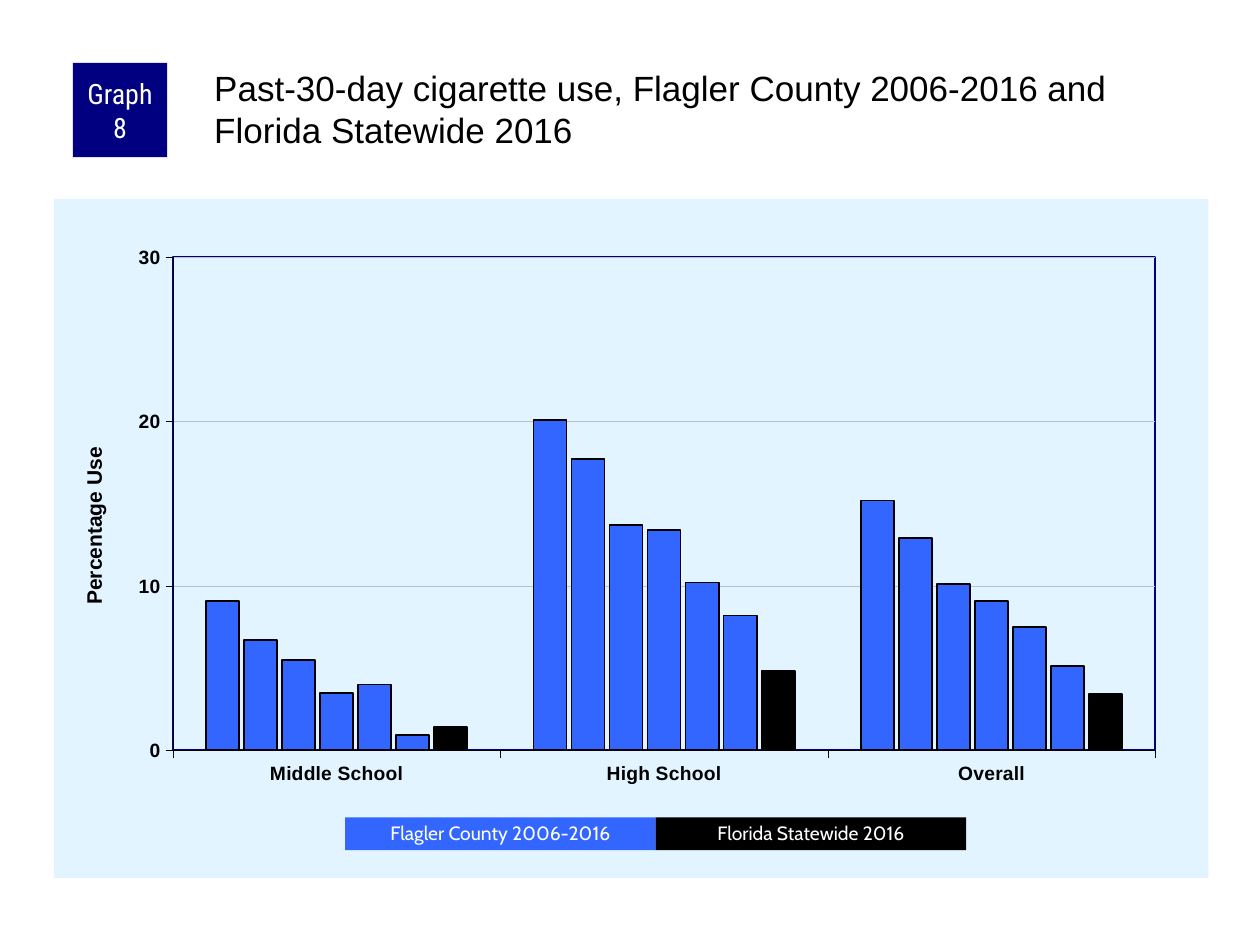
from lxml.etree import fromstring
from pptx import Presentation
from pptx.chart.data import CategoryChartData
from pptx.dml.color import RGBColor
from pptx.enum.chart import XL_CHART_TYPE, XL_TICK_MARK
from pptx.enum.shapes import MSO_SHAPE
from pptx.enum.text import MSO_ANCHOR, PP_ALIGN
from pptx.oxml.ns import qn
from pptx.util import Cm, Pt

HUE = {"navy": "000080", "blue": "3366FF", "black": "000000",
       "white": "FFFFFF", "pale": "E1F4FF", "grid": "C0C0C0"}
NS = ('xmlns:c="http://schemas.openxmlformats.org/drawingml/2006/chart" '
      'xmlns:a="http://schemas.openxmlformats.org/drawingml/2006/main"')
GROUPS = ["Middle School", "High School", "Overall"]
USE = [(9.1, 20.1, 15.2), (6.7, 17.7, 12.9), (5.5, 13.7, 10.1),
       (3.5, 13.4, 9.1), (4, 10.2, 7.5), (0.9, 8.2, 5.1), (1.4, 4.8, 3.4)]


def tint(name):
    """Return the named colour."""
    return RGBColor.from_string(HUE[name])


def style(font, face, size, hue, bold=False):
    """Set the look of a font."""
    font.name, font.size, font.bold = face, Pt(size), bold
    font.color.rgb = tint(hue)


def stroke(line, hue, width):
    """Set the colour and width of a line."""
    line.color.rgb = tint(hue)
    line.width = Pt(width)


def label(slide, box, text, fill, face, size, pad=0.25):
    """Add a filled box with centred white text."""
    shape = slide.shapes.add_shape(MSO_SHAPE.RECTANGLE, *map(Cm, box))
    shape.shadow.inherit = False
    shape.fill.solid()
    shape.fill.fore_color.rgb = tint(fill)
    shape.line.fill.background()
    frame = shape.text_frame
    frame.text = text
    frame.word_wrap = True
    frame.vertical_anchor = MSO_ANCHOR.MIDDLE
    frame.margin_left = frame.margin_right = Cm(pad)
    frame.margin_top = frame.margin_bottom = 0
    para = frame.paragraphs[0]
    para.alignment = PP_ALIGN.CENTER
    style(para.runs[0].font, face, size, "white")
    return para


def header(slide, box):
    """Add the graph number and the heading."""
    left, top, width, height = box
    side, shift = 1.9, 2.77
    label(slide, (left, top, side, side), "Graph 8", "navy",
          "Roboto Condensed", 16, 0.13)
    place = left + shift, top, width - shift, height
    frame = slide.shapes.add_textbox(*map(Cm, place)).text_frame
    frame.word_wrap = True
    frame.margin_left = frame.margin_top = Cm(0.08)
    frame.margin_right = frame.margin_bottom = 0
    frame.text = ("Past-30-day cigarette use, Flagler County 2006-2016 "
                  "and Florida Statewide 2016")
    style(frame.paragraphs[0].runs[0].font, "Arial", 20, "black")


def layout(node, index, **spots):
    """Place a chart part by fractions of the chart."""
    for old in node.findall(qn("c:layout")):
        node.remove(old)
    inner = '<c:layoutTarget val="inner"/>' if "w" in spots else ""
    modes = '<c:xMode val="edge"/><c:yMode val="edge"/>'
    sizes = "".join(f'<c:{key} val="{val}"/>' for key, val in spots.items())
    node.insert(index, fromstring(
        f"<c:layout {NS}><c:manualLayout>{inner}{modes}{sizes}"
        "</c:manualLayout></c:layout>"))


def paint(fill, line):
    """Return the shape properties of a chart area."""
    return fromstring(f"<c:spPr {NS}>{fill}{line}</c:spPr>")


def solid(hue):
    """Return a solid fill as XML."""
    return f'<a:solidFill><a:srgbClr val="{HUE[hue]}"/></a:solidFill>'


def graph(slide, box):
    """Add the column chart of cigarette use."""
    data = CategoryChartData()
    data.categories = GROUPS
    for num, vals in enumerate(USE, 1):
        data.add_series(f"Series {num}", vals)
    chart = slide.shapes.add_chart(
        XL_CHART_TYPE.COLUMN_CLUSTERED, *map(Cm, box), data).chart
    chart.has_title = chart.has_legend = False
    style(chart.font, "Arial", 8, "black")
    plot = chart.plots[0]
    plot.gap_width, plot.overlap, plot.vary_by_categories = 200, -15, False
    for row in plot.series:
        row.invert_if_negative = False
        row.format.fill.solid()
        last = row.name == f"Series {len(USE)}"
        row.format.fill.fore_color.rgb = tint("black" if last else "blue")
        stroke(row.format.line, "black", 1)

    rise = chart.value_axis
    for axis in (chart.category_axis, rise):
        axis.major_tick_mark = XL_TICK_MARK.OUTSIDE
        style(axis.tick_labels.font, "Arial", 11, "black", True)
        stroke(axis.format.line, "black", 0.25)
    rise.minimum_scale, rise.maximum_scale, rise.major_unit = 0, 30, 10
    rise.tick_labels.number_format = "0"
    rise.tick_labels.number_format_is_linked = False
    stroke(rise.major_gridlines.format.line, "grid", 0.25)
    frame = rise.axis_title.text_frame
    frame.text = "Percentage Use"
    style(frame.paragraphs[0].runs[0].font, "Arial", 12, "black", True)

    root = chart.element
    title = next(root.iter(qn("c:title")))
    body = next(title.iter(qn("a:bodyPr")))
    body.set("rot", "-5400000")
    body.set("vert", "horz")
    layout(title, 1, x=0.02, y=0.36)
    area = next(root.iter(qn("c:plotArea")))
    layout(area, 0, x=0.103, y=0.086, w=0.851, h=0.726)
    area.append(paint("<a:noFill/>", f'<a:ln w="12700">{solid("navy")}</a:ln>'))
    root.find(qn("c:chart")).addnext(
        paint(solid("pale"), "<a:ln><a:noFill/></a:ln>"))


def legend(slide, box):
    """Add the two keys side by side."""
    left, top, width, height = box
    keys = [("Flagler County 2006-2016", "blue"),
            ("Florida Statewide 2016", "black")]
    step = width / len(keys)
    for num, (text, fill) in enumerate(keys):
        place = left + num * step, top, step, height
        label(slide, place, text, fill, "Cabin", 11).line_spacing = 0.9


def main():
    """Build and save the slide."""
    deck = Presentation()
    deck.slide_width, deck.slide_height = Cm(25.4), Cm(19.05)
    slide = deck.slides.add_slide(deck.slide_layouts[6])
    graph(slide, (1.09, 4.01, 23.27, 13.69))
    header(slide, (1.47, 1.27, 22.89, 2.11))
    legend(slide, (6.96, 16.48, 12.52, 0.66))
    deck.save("out.pptx")


if __name__ == "__main__":
    main()
